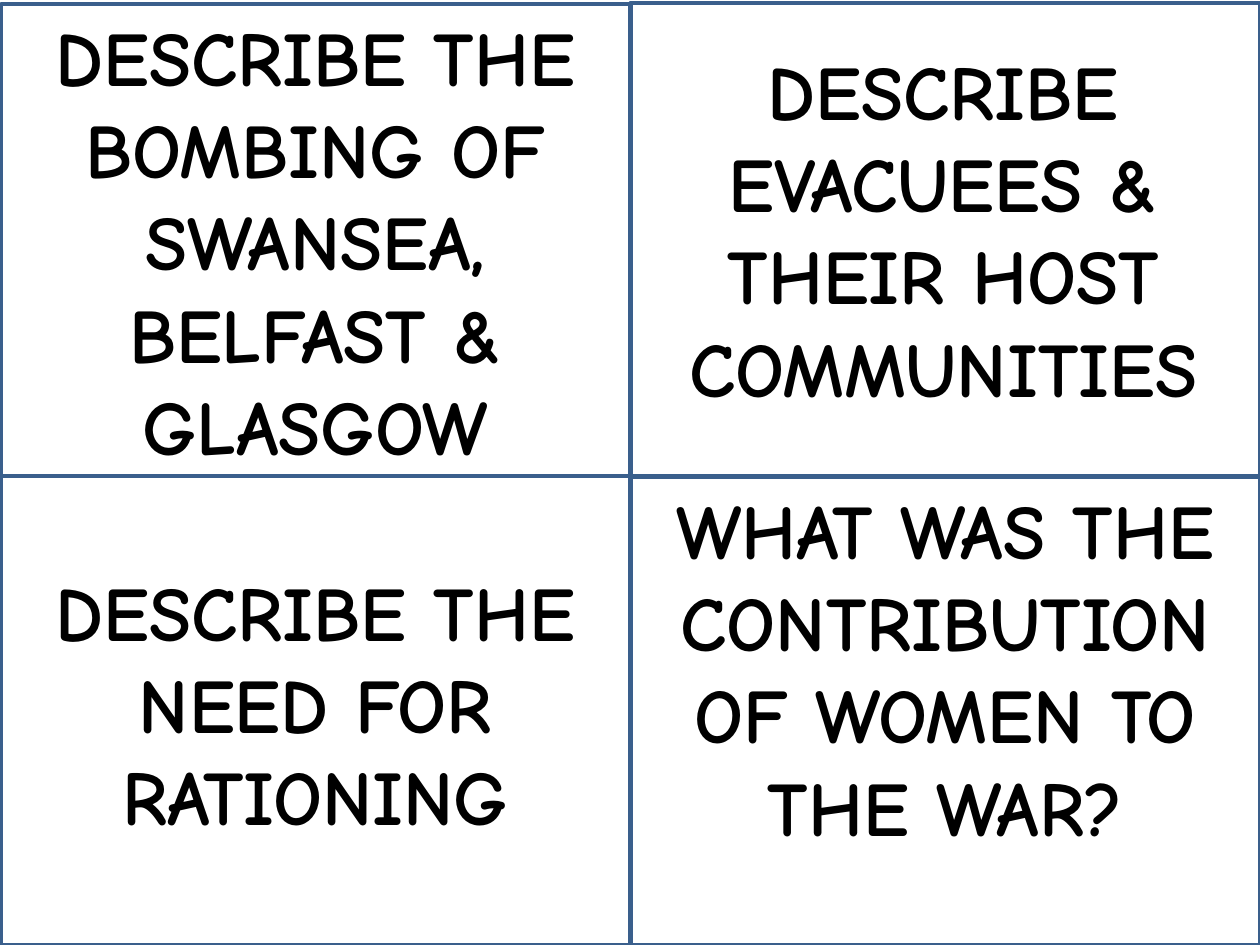
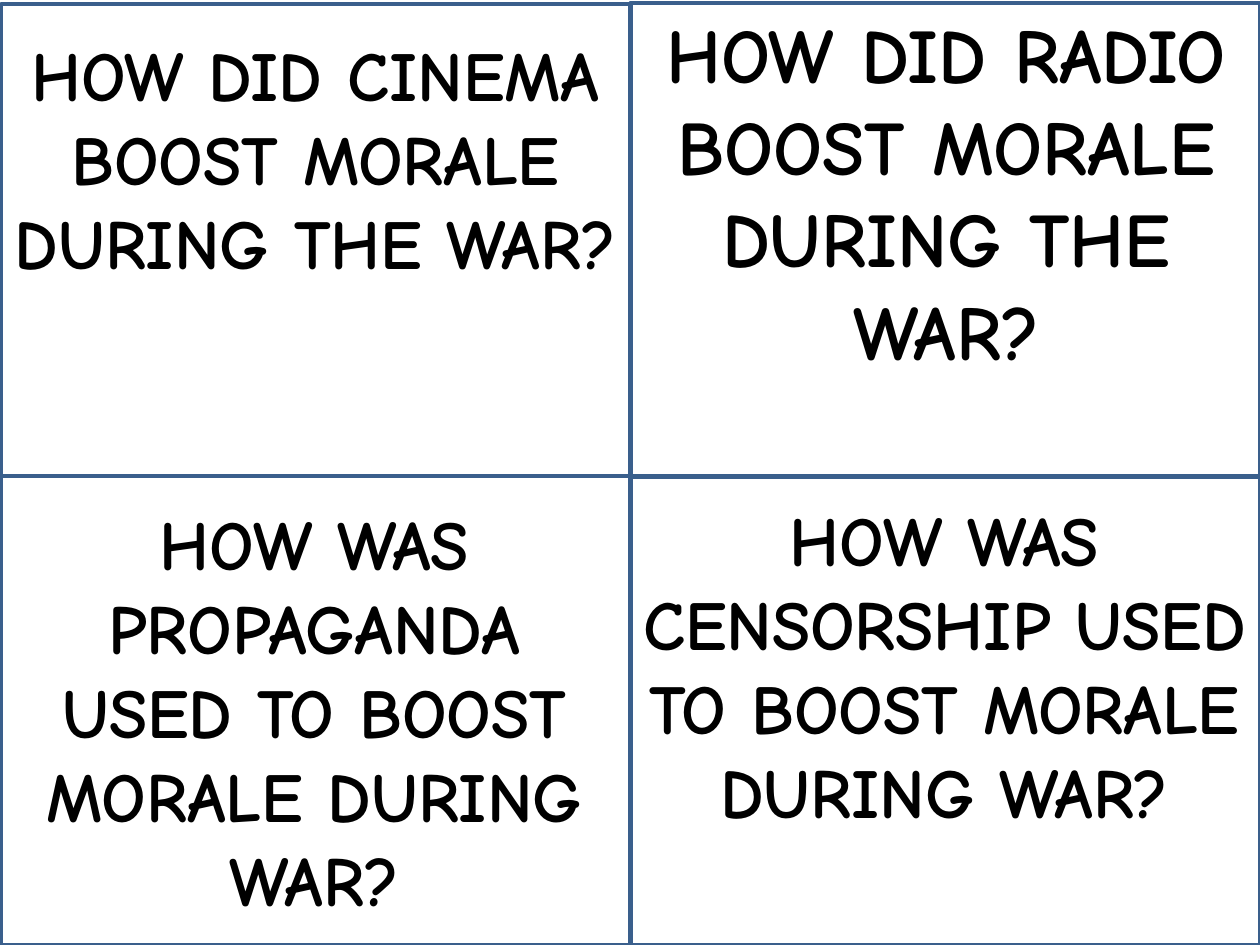
from pptx import Presentation
from pptx.dml.color import RGBColor
from pptx.enum.shapes import MSO_SHAPE as Shape
from pptx.enum.text import MSO_AUTO_SIZE as AutoSize, MSO_ANCHOR as Anchor, PP_ALIGN as Align
from pptx.util import Pt

EMU_PER_PX = 914400 / 126
SLIDE_SIZE = (1260, 945)
COLOURS = {"border": "3A5F8C", "text": "000000"}
FONT = {"name": "Comic Neue", "bold": True}
FRAME = {"word_wrap": True, "auto_size": AutoSize.SHAPE_TO_FIT_TEXT, "vertical_anchor": Anchor.TOP}

# Boxes are left, top, width, height in px
CARDS = [
    (630, 3, 630, 474),
    (630, 476, 630, 469),
    (1, 4, 630, 472),
    (1, 476, 630, 469),
]

# Each question: wording, box, point size
QUESTION_SLIDES = [
    [
        ("DESCRIBE THE BOMBING OF SWANSEA, BELFAST & GLASGOW", (0, 3, 631, 479), 44),
        ("DESCRIBE EVACUEES & THEIR HOST COMMUNITIES", (629, 37, 629, 386), 44),
        ("DESCRIBE THE NEED FOR RATIONING", (1, 558, 629, 292), 44),
        ("WHAT WAS THE CONTRIBUTION OF WOMEN TO THE WAR?", (631, 476, 629, 479), 44),
    ],
    [
        ("HOW DID CINEMA BOOST MORALE DURING THE WAR?", (0, 25, 631, 437), 40),
        ("HOW DID RADIO BOOST MORALE DURING THE WAR?", (631, 0, 631, 479), 44),
        ("HOW WAS PROPAGANDA USED TO BOOST MORALE DURING WAR?", (-1, 494, 631, 437), 40),
        ("HOW WAS CENSORSHIP USED TO BOOST MORALE DURING WAR?", (629, 490, 631, 437), 40),
    ],
]


def to_emu(lengths):
    return [round(length * EMU_PER_PX) for length in lengths]


def colour(name):
    return RGBColor.from_string(COLOURS[name])


def apply_format(target, values):
    for name, value in values.items():
        setattr(target, name, value)


def add_card(slide, box):
    card = slide.shapes.add_shape(Shape.RECTANGLE, *to_emu(box))
    card.shadow.inherit = False
    card.fill.background()
    card.line.color.rgb = colour("border")
    card.line.width = Pt(2)


def add_question(slide, wording, box, size):
    frame = slide.shapes.add_textbox(*to_emu(box)).text_frame
    apply_format(frame, FRAME)
    paragraph = frame.paragraphs[0]
    paragraph.alignment = Align.CENTER
    run = paragraph.add_run()
    run.text = wording
    apply_format(run.font, FONT | {"size": Pt(size)})
    run.font.color.rgb = colour("text")


def add_question_slide(presentation, questions):
    slide = presentation.slides.add_slide(presentation.slide_layouts[6])
    for box in CARDS:
        add_card(slide, box)
    for wording, box, size in questions:
        add_question(slide, wording, box, size)


def main():
    presentation = Presentation()
    presentation.slide_width, presentation.slide_height = to_emu(SLIDE_SIZE)
    for questions in QUESTION_SLIDES:
        add_question_slide(presentation, questions)
    presentation.save("out.pptx")


if __name__ == "__main__":
    main()
